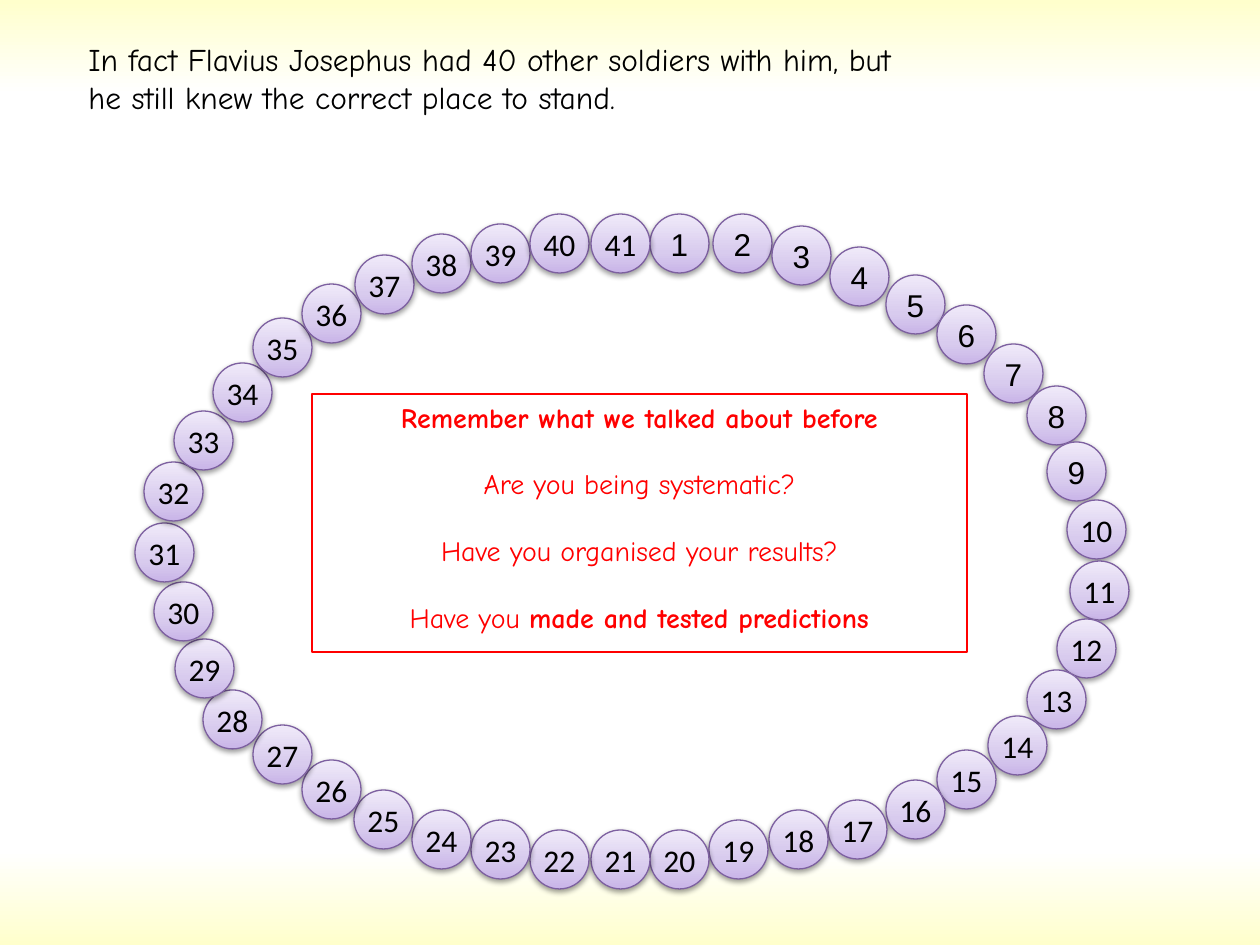
"""Build a slide with 41 numbered soldiers standing in a ring around a reminder box."""
from lxml import etree
from pptx import Presentation
from pptx.dml.color import RGBColor
from pptx.enum.shapes import MSO_SHAPE
from pptx.enum.text import MSO_ANCHOR, MSO_AUTO_SIZE, PP_ALIGN
from pptx.oxml.ns import qn
from pptx.util import Pt

ELLIPSE = MSO_SHAPE.OVAL
LEFT, CENTER = PP_ALIGN.LEFT, PP_ALIGN.CENTER
MIDDLE = MSO_ANCHOR.MIDDLE
GROW = MSO_AUTO_SIZE.SHAPE_TO_FIT_TEXT
PX = 914400 // 126

THEME = {
    "background": [(0, "FFFFCC"), (10, "FFFFFF"), (90, "FFFFFF"), (100, "FFFFCC")],
    "soldier": [(0, "C9B5E8"), (35, "D8CBEE"), (100, "F0EAF9")],
    "soldier_line": "7D60A0",
    "ink": "000000",
    "alert": "FF0000",
    "text_font": "Comic Neue",
    "low_number_font": "Arial",
    "number_font": "Calibri",
    "body_size": 18,
    "reminder_size": 16,
    "line_width": 0.75,
}


def set_gradient(owner, fill, stops, angle):
    fill.gradient()
    gradient = owner.element.find(".//" + qn("a:gradFill"))
    stop_list = gradient.find(qn("a:gsLst"))
    for stop in list(stop_list):
        stop_list.remove(stop)
    for position, color in stops:
        stop = etree.SubElement(stop_list, qn("a:gs"), pos=str(position * 1000))
        etree.SubElement(stop, qn("a:srgbClr"), val=color)
    gradient.find(qn("a:lin")).set("ang", str(angle * 60000))


def write_text(shape, paragraphs, *, font, size, color, align=LEFT, gap=0, wrap=True):
    frame = shape.text_frame
    frame.word_wrap = wrap
    for index, runs in enumerate(paragraphs):
        paragraph = frame.add_paragraph() if index else frame.paragraphs[0]
        paragraph.alignment = align
        paragraph.space_before = Pt(gap if index else 0)
        for text, bold in runs:
            run = paragraph.add_run()
            run.text = text
            run.font.name = font
            run.font.size = Pt(size)
            run.font.bold = bold
            run.font.color.rgb = RGBColor.from_string(color)


presentation = Presentation()
presentation.slide_width = 1260 * PX
presentation.slide_height = 945 * PX
slide = presentation.slides.add_slide(presentation.slide_layouts[6])
set_gradient(slide, slide.background.fill, THEME["background"], 90)

SOLDIER_SIZE = 59
SOLDIER_POSITIONS = [
    (650, 214), (713, 214), (772, 226), (830, 247), (886, 275), (937, 305),
    (984, 344), (1027, 386), (1047, 442), (1067, 500), (1070, 561), (1057, 619),
    (1027, 670), (988, 716), (937, 750), (886, 780), (828, 800), (769, 810),
    (709, 820), (650, 830), (591, 830), (530, 830), (471, 820), (412, 810),
    (354, 790), (302, 760), (253, 725), (203, 690), (175, 639), (154, 582),
    (135, 523), (144, 462), (174, 411), (213, 363), (253, 318), (302, 284),
    (355, 255), (412, 234), (471, 224), (530, 214), (591, 214),
]
for number, (left, top) in enumerate(SOLDIER_POSITIONS, start=1):
    soldier = slide.shapes.add_shape(
        ELLIPSE, left * PX, top * PX, SOLDIER_SIZE * PX, SOLDIER_SIZE * PX)
    set_gradient(soldier, soldier.fill, THEME["soldier"], 270)
    soldier.line.color.rgb = RGBColor.from_string(THEME["soldier_line"])
    soldier.line.width = Pt(THEME["line_width"])
    soldier.shadow.inherit = False
    effects = soldier.element.find(".//" + qn("a:effectLst"))
    shadow = etree.SubElement(effects, qn("a:outerShdw"), blurRad="40000",
                              dist="20000", dir="5400000", rotWithShape="0")
    shadow_color = etree.SubElement(shadow, qn("a:srgbClr"), val=THEME["ink"])
    etree.SubElement(shadow_color, qn("a:alpha"), val="38000")
    soldier.text_frame.vertical_anchor = MIDDLE
    number_font = THEME["low_number_font"] if number < 10 else THEME["number_font"]
    write_text(soldier, [[(str(number), False)]], font=number_font,
               size=THEME["body_size"], color=THEME["ink"], align=CENTER, wrap=False)

reminder = slide.shapes.add_textbox(312 * PX, 394 * PX, 655 * PX, 258 * PX)
reminder.line.color.rgb = RGBColor.from_string(THEME["alert"])
reminder.line.width = Pt(THEME["line_width"])
reminder.text_frame.auto_size = GROW
write_text(reminder, [
    [("Remember what we talked about before", True)],
    [("Are you being systematic?", False)],
    [("Have you organised your results?", False)],
    [("Have you ", False), ("made and tested predictions", True)],
], font=THEME["text_font"], size=THEME["reminder_size"], color=THEME["alert"],
    align=CENTER, gap=19)

introduction = slide.shapes.add_textbox(76 * PX, 34 * PX, 840 * PX, 89 * PX)
introduction.text_frame.auto_size = GROW
write_text(introduction, [[(
    "In fact Flavius Josephus had 40 other soldiers with him, "
    "but he still knew the correct place to stand.", False)]],
    font=THEME["text_font"], size=THEME["body_size"], color=THEME["ink"])

presentation.save("out.pptx")
